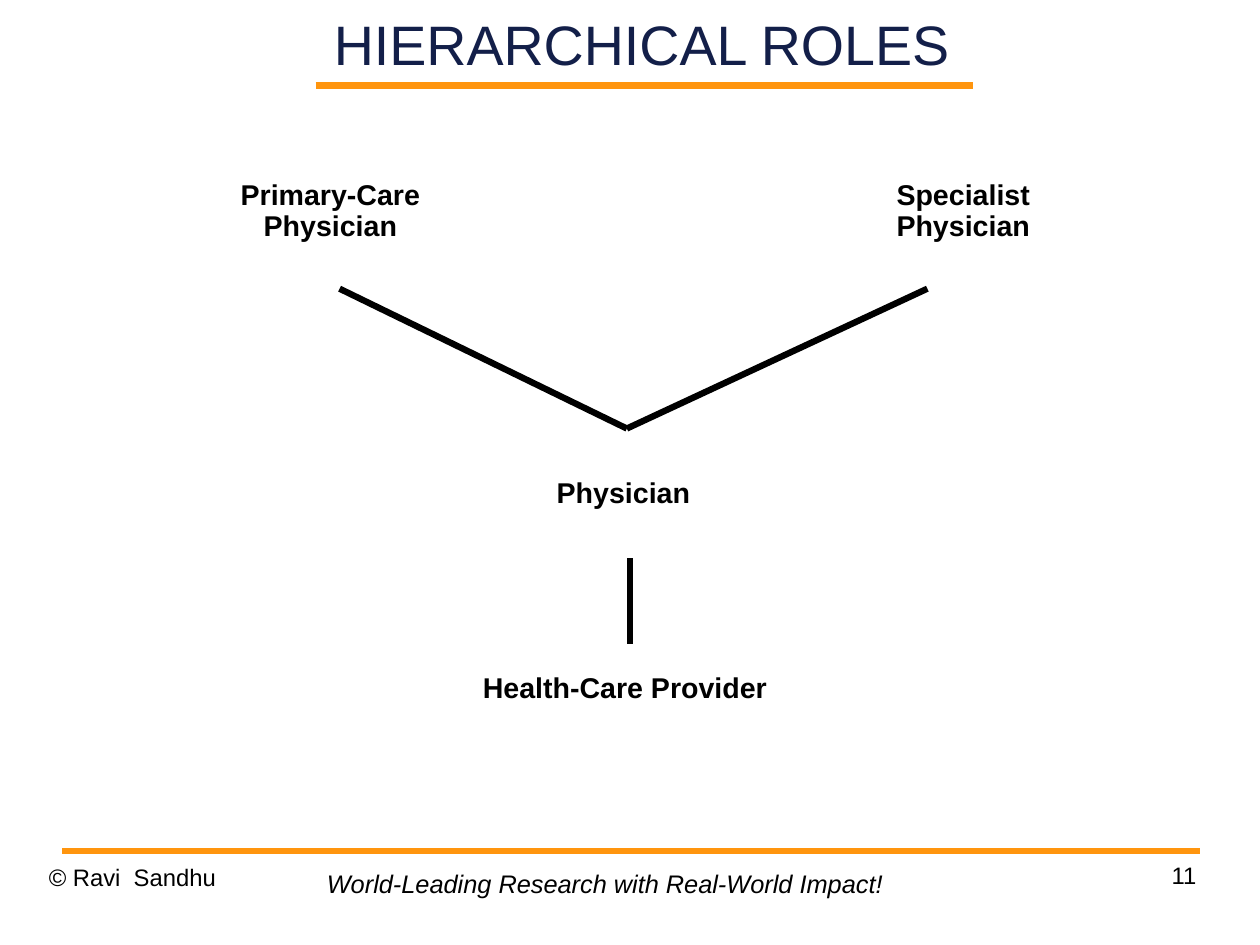
from pptx import Presentation, util as u
from pptx.dml.color import RGBColor
from pptx.enum import shapes, text
from pptx.oxml.ns import qn
from lxml import etree

ORANGE, NAVY, BLACK = "FF950E", "131F49", "000000"
LEFT, CENTER, RIGHT = text.PP_ALIGN.LEFT, text.PP_ALIGN.CENTER, text.PP_ALIGN.RIGHT


def color(hex_string):
    return RGBColor.from_string(hex_string)


class RoleSlide:
    """One slide on a grid of 100 columns by 100 rows."""

    font = "Arial"

    def __init__(self, prs):
        self.col = prs.slide_width / 100
        self.row = prs.slide_height / 100
        self.s = prs.slides.add_slide(prs.slide_layouts[6])

    def x(self, columns):
        return u.Emu(round(columns * self.col))

    def y(self, rows):
        return u.Emu(round(rows * self.row))

    def line(self, x1, y1, x2, y2, hex_string=BLACK, width=4):
        sp = self.s.shapes.add_connector(
            shapes.MSO_CONNECTOR.STRAIGHT,
            self.x(x1), self.y(y1), self.x(x2), self.y(y2))
        sp.line.color.rgb = color(hex_string)
        sp.line.width = u.Pt(width)
        etree.SubElement(sp._element.spPr, qn("a:effectLst"))

    def text(self, lines, left, top, width, height, size, align=LEFT,
             hex_string=BLACK, bold=False, italic=False, spacing=1.0,
             inset=(0, 0), grow=False, anchor=text.MSO_ANCHOR.TOP):
        sp = self.s.shapes.add_textbox(
            self.x(left), self.y(top), self.x(width), self.y(height))
        tf = sp.text_frame
        tf.word_wrap = not grow
        if grow:
            tf.auto_size = text.MSO_AUTO_SIZE.SHAPE_TO_FIT_TEXT
        tf.vertical_anchor = anchor
        tf.margin_left = tf.margin_right = u.Inches(inset[0])
        tf.margin_top = tf.margin_bottom = u.Inches(inset[1])
        for i, content in enumerate(lines):
            p = tf.add_paragraph() if i else tf.paragraphs[0]
            p.text = content
            p.alignment = align
            p.line_spacing = spacing
            p.font.name = self.font
            p.font.size = u.Pt(size)
            p.font.bold = bold
            p.font.italic = italic
            p.font.color.rgb = color(hex_string)

    def role(self, lines, center, top, width):
        height = 1.3 + 3.28 * len(lines)
        self.text(lines, center - width / 2, top, width, height, 18, CENTER,
                  bold=True, spacing=0.9, inset=(0.11, 0.05), grow=True)


def main():
    prs = Presentation()
    prs.slide_width, prs.slide_height = u.Cm(28), u.Cm(21)
    slide = RoleSlide(prs)

    # Title and footer rules
    slide.line(25.05, 9.07, 77.2, 9.07, ORANGE, 4.31)
    slide.line(4.95, 90.05, 95.25, 90.05, ORANGE, 4.31)

    # Footer
    slide.text(["© Ravi  Sandhu"], 3.88, 91.3, 23.3, 6.9, 15, spacing=1.01)
    slide.text(["11"], 71.65, 91, 23.3, 6.9, 15, RIGHT, spacing=1.01)
    slide.text(["World-Leading Research with Real-World Impact!"],
               25.05, 91.3, 47, 4.5, 16, italic=True,
               inset=(0.1, 0.05), grow=True)

    # Title
    slide.text(["HIERARCHICAL ROLES"], 21.8, 0, 58.3, 9.07, 35, CENTER, NAVY,
               anchor=text.MSO_ANCHOR.MIDDLE)

    # Roles, from general to specialised
    slide.role(["Health-Care Provider"], 49.6, 70.75, 24.8)
    slide.role(["Physician"], 49.48, 50.1, 12.7)
    slide.role(["Primary-Care", "Physician"], 26.22, 18.5, 16.4)
    slide.role(["Specialist", "Physician"], 76.45, 18.5, 12.7)

    # Inheritance lines
    slide.line(50, 59.05, 50, 68.1)
    for branch in (26.95, 73.6):
        slide.line(branch, 30.55, 49.75, 45.35)

    prs.save("out.pptx")


if __name__ == "__main__":
    main()
